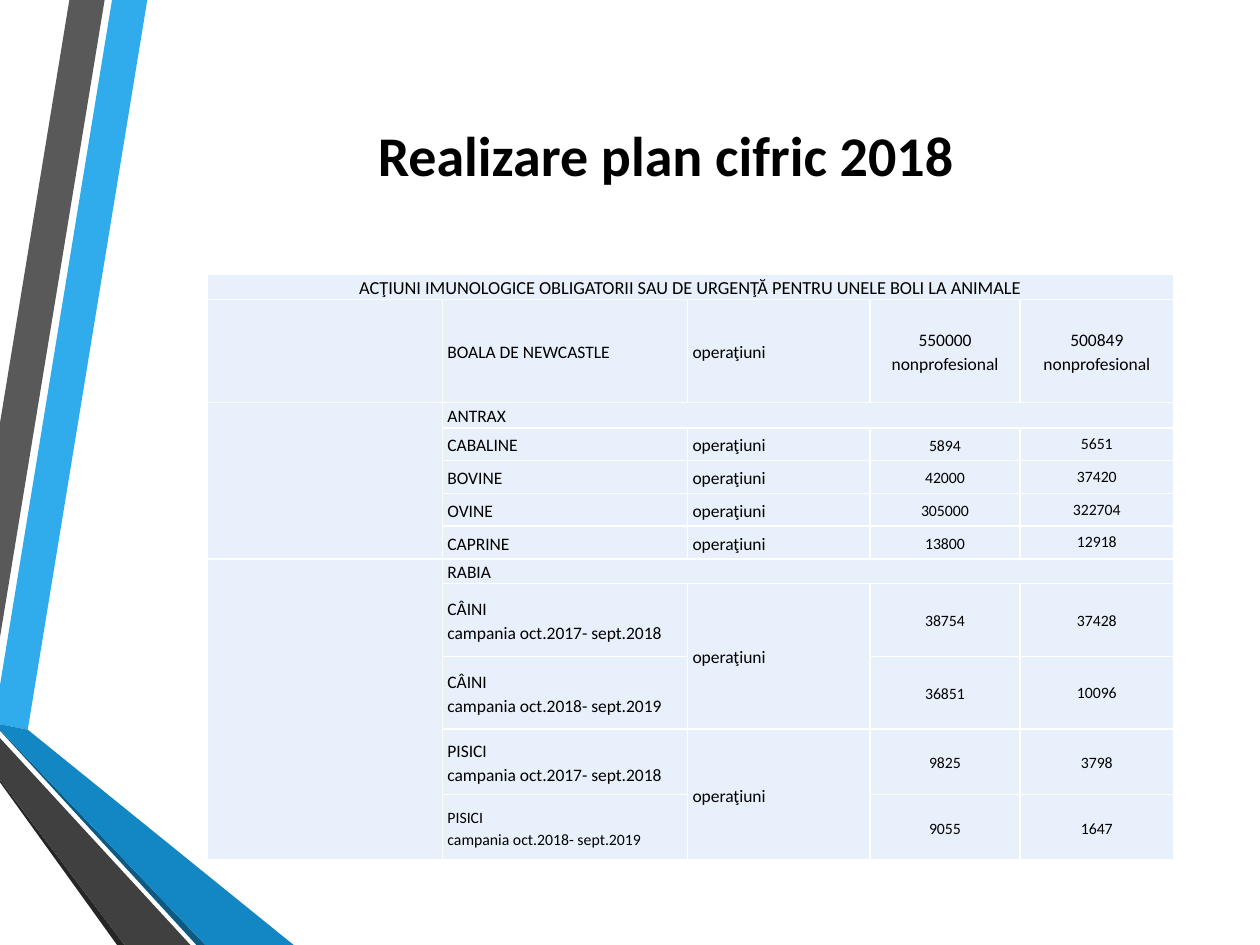
"""Build the slide on the 2018 immunisation plan: title, ribbon decoration and results table."""
import lxml.etree
import pptx
import pptx.dml.color
import pptx.enum.text
import pptx.oxml.ns
import pptx.util

Cm = pptx.util.Cm
Pt = pptx.util.Pt
RGB = pptx.dml.color.RGBColor.from_string
ALIGN = pptx.enum.text.PP_ALIGN
MIDDLE = pptx.enum.text.MSO_ANCHOR.MIDDLE
BOTTOM = pptx.enum.text.MSO_ANCHOR.BOTTOM
qn = pptx.oxml.ns.qn

COLORS = {
    "sky": "30ACEC", "grey": "595959", "black_edge": "262626",
    "navy_edge": "0C5A82", "blue": "1287C3", "charcoal": "404040",
    "cell": "E8F1FB", "border": "FFFFFF", "text": "000000",
}

deck = pptx.Presentation()
deck.slide_width, deck.slide_height = Cm(25.4), Cm(19.05)
slide = deck.slides.add_slide(deck.slide_layouts[5])

ribbons = [
    ("sky", [(0, 13.82), (0, 14.6), (0.56, 14.71), (2.97, 0), (2.26, 0)]),
    ("grey", [(2.11, 0), (1.4, 0), (0, 8.53), (0, 12.85)]),
    ("black_edge", [(0, 15.72), (0, 15.77), (2.36, 19.05), (2.51, 19.05)]),
    ("navy_edge", [(0, 14.71), (0, 14.73), (3.96, 19.05), (4.14, 19.05)]),
    ("blue", [(0, 14.71), (4.14, 19.05), (5.92, 19.05), (0.56, 14.71), (0, 14.6)]),
    ("charcoal", [(0, 15.72), (2.51, 19.05), (3.84, 19.05), (0, 14.88)]),
]
for color, corners in ribbons:
    points = [(Cm(x), Cm(y)) for x, y in corners]
    outline = slide.shapes.build_freeform(*points[0])
    outline.add_line_segments(points[1:], close=True)
    ribbon = outline.convert_to_shape()
    ribbon.shadow.inherit = False
    ribbon.fill.solid()
    ribbon.fill.fore_color.rgb = RGB(COLORS[color])
    ribbon.line.fill.background()

heading = slide.shapes.title
heading_box = {"left": Cm(2.72), "top": Cm(1.27), "width": Cm(21.41), "height": Cm(3.68)}
for attribute, value in heading_box.items():
    setattr(heading, attribute, value)
heading.text_frame.text = "Realizare plan cifric 2018"
heading.text_frame.vertical_anchor = MIDDLE
heading.text_frame.paragraphs[0].alignment = ALIGN.CENTER
heading_font = heading.text_frame.paragraphs[0].runs[0].font
for attribute, value in {"name": "Calibri", "size": Pt(32), "bold": True}.items():
    setattr(heading_font, attribute, value)
heading_font.color.rgb = RGB(COLORS["text"])

unit = "operaţiuni"
old_campaign = "campania oct.2017- sept.2018"
new_campaign = "campania oct.2018- sept.2019"
rows = [
    (0.48, ["ACŢIUNI IMUNOLOGICE OBLIGATORII SAU DE URGENŢĂ PENTRU UNELE BOLI LA ANIMALE"]),
    (2.08, ["", "BOALA DE NEWCASTLE", unit, "550000 nonprofesional", "500849\nnonprofesional"]),
    (0.51, ["", "ANTRAX"]),
    (0.66, ["", "CABALINE", unit, "5894", "5651"]),
    (0.66, ["", "BOVINE", unit, "42000", "37420"]),
    (0.66, ["", "OVINE", unit, "305000", "322704"]),
    (0.66, ["", "CAPRINE", unit, "13800", "12918"]),
    (0.48, ["", "RABIA"]),
    (1.47, ["", f"CÂINI\n{old_campaign}", unit, "38754", "37428"]),
    (1.47, ["", f"CÂINI\n{new_campaign}", "", "36851", "10096"]),
    (1.32, ["", f"PISICI\n{old_campaign}", unit, "9825", "3798"]),
    (1.32, ["", f"PISICI\n{new_campaign}", "", "9055", "1647"]),
]
column_widths = [4.75, 4.94, 3.68, 3.02, 3.1]
last_row = len(rows) - 1
single_spaced = {"5651", "37420", "322704", "12918", "10096"}

results = slide.shapes.add_table(
    len(rows), len(column_widths), Cm(4.17), Cm(5.52),
    Cm(sum(column_widths)), Cm(sum(height for height, _ in rows))).table
results.first_row = results.horz_banding = False
for column, width in zip(results.columns, column_widths):
    column.width = Cm(width)

cell_format = {"margin_left": Cm(0.1), "margin_right": Cm(0.1),
               "margin_top": 0, "margin_bottom": 0}
for r, (height, texts) in enumerate(rows):
    results.rows[r].height = Cm(height)
    for c in range(len(column_widths)):
        cell = results.cell(r, c)
        for attribute, value in cell_format.items():
            setattr(cell, attribute, value)
        cell.vertical_anchor = BOTTOM if r == 0 else MIDDLE
        for side in ("a:lnL", "a:lnR", "a:lnT", "a:lnB"):
            edge = lxml.etree.SubElement(cell._tc.tcPr, qn(side), w=str(Pt(1)))
            paint = lxml.etree.SubElement(edge, qn("a:solidFill"))
            lxml.etree.SubElement(paint, qn("a:srgbClr"), val=COLORS["border"])
        cell.fill.solid()
        cell.fill.fore_color.rgb = RGB(COLORS["cell"])

        text = texts[c] if c < len(texts) else ""
        if not text:
            blank = cell.text_frame.paragraphs[0]._p
            lxml.etree.SubElement(blank, qn("a:endParaRPr"), sz="900")
            continue
        cell.text_frame.text = text
        if r == 0:
            size = 10.5
        elif text.isdigit() or (r == last_row and c == 1):
            size = 9
        else:
            size = 10
        for paragraph in cell.text_frame.paragraphs:
            paragraph.alignment = ALIGN.CENTER if r == 0 or c > 2 else ALIGN.LEFT
            paragraph.line_spacing = 1.0 if text in single_spaced else 1.15
            font = paragraph.runs[0].font
            for attribute, value in {"name": "Calibri", "size": Pt(size), "bold": False}.items():
                setattr(font, attribute, value)
            font.color.rgb = RGB(COLORS["text"])

merged_areas = [
    (0, 0, 0, 4), (2, 0, 6, 0), (2, 1, 2, 4), (7, 0, 11, 0),
    (7, 1, 7, 4), (8, 2, 9, 2), (10, 2, 11, 2),
]
for top, left, bottom, right in merged_areas:
    results.cell(top, left).merge(results.cell(bottom, right))

deck.save("out.pptx")
